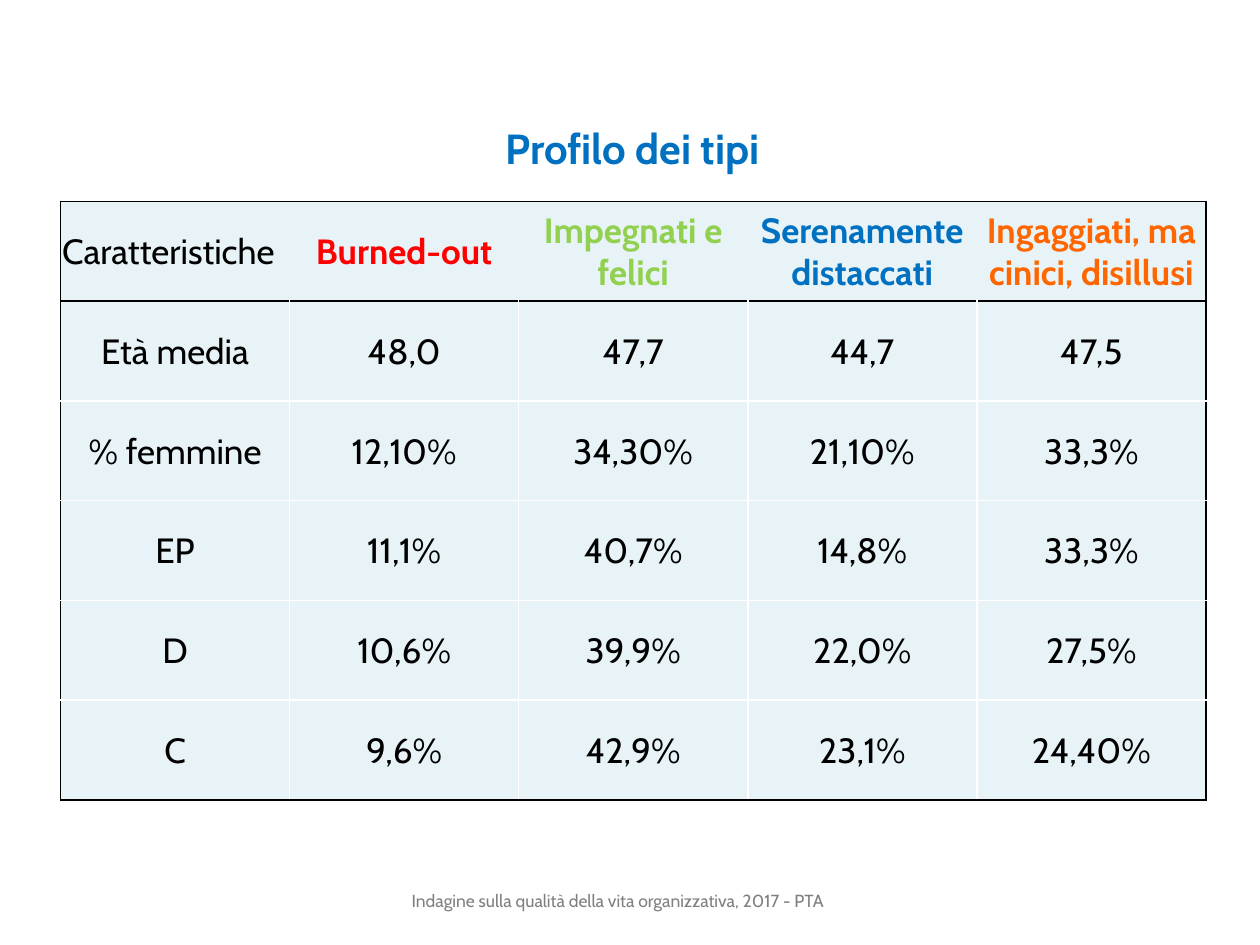
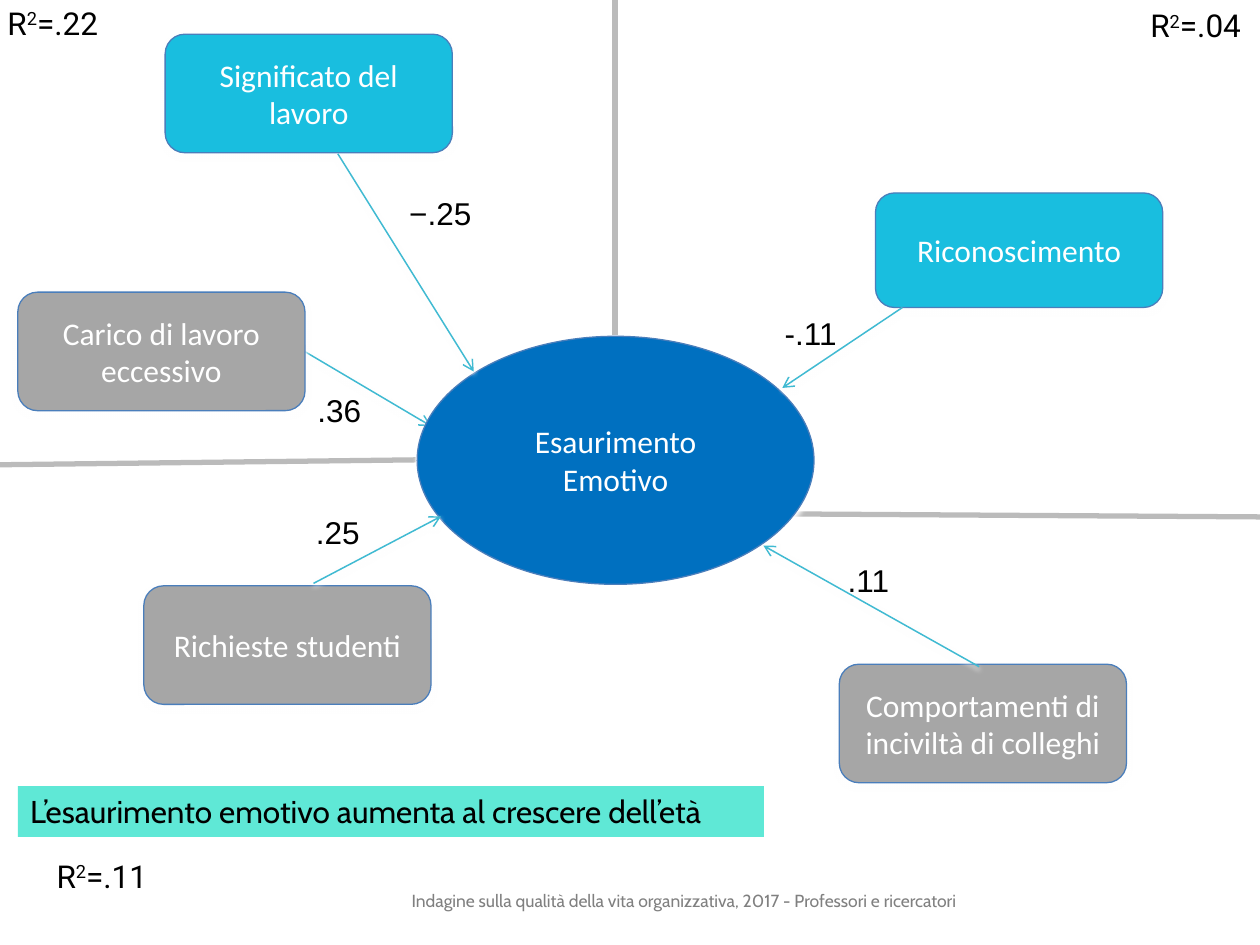
from typing import NamedTuple, Optional

from lxml import etree
from pptx import Presentation
from pptx import util as u
from pptx.dml.color import RGBColor
from pptx.enum import shapes, text
from pptx.oxml.ns import qn

# Colours
BLACK = RGBColor(0x00, 0x00, 0x00)
WHITE = RGBColor(0xFF, 0xFF, 0xFF)
GREY = RGBColor(0x80, 0x80, 0x80)
BLUE = RGBColor(0x00, 0x70, 0xC0)
RED = RGBColor(0xFF, 0x00, 0x00)
GREEN = RGBColor(0x92, 0xD0, 0x50)
ORANGE = RGBColor(0xFF, 0x66, 0x00)
PALE = RGBColor(0xE8, 0xF3, 0xF7)
CYAN = RGBColor(0x19, 0xBE, 0xDF)
STONE = RGBColor(0xA6, 0xA6, 0xA6)
EDGE = RGBColor(0x4A, 0x7E, 0xBB)
ARROW = RGBColor(0x40, 0xBA, 0xD2)
RULE = RGBColor(0xBB, 0xBB, 0xBB)
MINT = RGBColor(0x5F, 0xE8, 0xD6)

LEFT, MID = text.PP_ALIGN.LEFT, text.PP_ALIGN.CENTER
TOP, HALF = text.MSO_ANCHOR.TOP, text.MSO_ANCHOR.MIDDLE
ROUND = shapes.MSO_SHAPE.ROUNDED_RECTANGLE
OVAL = shapes.MSO_SHAPE.OVAL
SURVEY = "Indagine sulla qualità della vita organizzativa, 2017 - "


class Font(NamedTuple):
    name: str
    size: float
    color: RGBColor
    bold: bool = False


class Area(NamedTuple):
    """Left, top, width and height in centimetres."""
    x: float
    y: float
    w: float
    h: float

    def emu(self) -> list:
        return [u.Cm(v) for v in self]


class Node(NamedTuple):
    label: str
    area: Area
    fill: RGBColor
    kind: int = ROUND


class Link(NamedTuple):
    """Ends in centimetres."""
    x1: float
    y1: float
    x2: float
    y2: float


class Shade(NamedTuple):
    alpha: int
    blur: float
    dist: float


class Mark(NamedTuple):
    label: str
    x: float
    y: float


FOOT = Font("Cabin", 10, GREY)
TITLE = Font("Cabin", 24, BLUE, True)
BODY = Font("Cabin", 20, BLACK)
NOTE = Font("Cabin", 18, BLACK)
LABEL = Font("Calibri", 18, WHITE)
COEF = Font("Arial", 18, BLACK)
FIT = Font("Roboto", 18, BLACK)

# Table content
HEADS = [("Caratteristiche", BLACK), ("Burned-out", RED),
         ("Impegnati e felici", GREEN), ("Serenamente\ndistaccati", BLUE),
         ("Ingaggiati, ma cinici, disillusi", ORANGE)]
ROWS = [("Età media", "48,0", "47,7", "44,7", "47,5"),
        ("% femmine", "12,10%", "34,30%", "21,10%", "33,3%"),
        ("EP", "11,1%", "40,7%", "14,8%", "33,3%"),
        ("D", "10,6%", "39,9%", "22,0%", "27,5%"),
        ("C", "9,6%", "42,9%", "23,1%", "24,40%")]
GRID = Area(1.22, 4.06, 23.09, 12.07)

# Diagram content
BOXW, BOXH = 5.79, 2.39
NODES = [
    Node("Significato del lavoro", Area(3.33, 0.69, BOXW, BOXH), CYAN),
    Node("Carico di lavoro eccessivo", Area(0.36, 5.89, BOXW, BOXH), STONE),
    Node("Riconoscimento", Area(17.65, 3.89, BOXW, 2.31), CYAN),
    Node("Richieste studenti", Area(2.9, 11.81, BOXW, BOXH), STONE),
    Node("Comportamenti di inciviltà di colleghi",
         Area(16.92, 13.39, BOXW, BOXH), STONE),
    Node("Esaurimento Emotivo", Area(8.41, 6.78, 8, 5), BLUE, OVAL)]
RULES = [Link(12.4, 0, 12.4, 6.76), Link(25.4, 10.42, 15.9, 10.36),
         Link(8.38, 9.27, 0, 9.37)]
UNDER = [Link(6.15, 7.09, 8.69, 8.59)]
OVER = [Link(6.81, 3.1, 9.55, 7.49), Link(18.19, 6.2, 15.77, 7.82),
        Link(6.32, 11.76, 8.89, 10.41), Link(19.74, 13.44, 15.39, 11)]
COEFS = [Mark(".36", 6.15, 7.75), Mark("−.25", 8, 3.78),
         Mark("-.11", 15.57, 6.2), Mark(".25", 6.12, 10.21),
         Mark(".11", 16.84, 11.18)]
FITS = [Mark("=.22", -0.1, -0.05), Mark("=.04", 22.94, 0),
        Mark("=.11", 0.89, 17.15)]
BOXSHADE, LINESHADE = Shade(35, 3.1, 1.8), Shade(38, 3.1, 1.6)


def dress(run, font: Font) -> None:
    run.font.name, run.font.size = font.name, u.Pt(font.size)
    run.font.bold = font.bold
    run.font.color.rgb = font.color


def write(frame, words: str, font: Font, align=LEFT) -> None:
    frame.text = words
    for par in frame.paragraphs:
        par.alignment = align
        for run in par.runs:
            dress(run, font)


def box(slide, area: Area, words: str, font: Font, align=LEFT, anchor=TOP):
    frame = slide.shapes.add_textbox(*area.emu()).text_frame
    frame.word_wrap = True
    frame.vertical_anchor = anchor
    write(frame, words, font, align)
    return frame


def footer(slide, group: str) -> None:
    box(slide, Area(8.05, 17.65, 12.32, 1.02), SURVEY + group, FOOT,
        anchor=HALF)


def paint(parent, color: RGBColor):
    fill = etree.SubElement(parent, qn("a:solidFill"))
    return etree.SubElement(fill, qn("a:srgbClr"), val=str(color))


def cast(props, shade: Optional[Shade]) -> None:
    """Put a downward shadow, or none, on the shape properties."""
    fx = props.find(qn("a:effectLst"))
    if fx is None:
        fx = etree.SubElement(props, qn("a:effectLst"))
    if shade:
        drop = etree.SubElement(
            fx, qn("a:outerShdw"), blurRad=str(u.Pt(shade.blur)),
            dist=str(u.Pt(shade.dist)), dir="5400000", rotWithShape="0")
        etree.SubElement(paint(drop, BLACK), qn("a:alpha"),
                         val=str(shade.alpha * 1000))


def border(cell, edges: dict) -> None:
    """Draw the cell edges; None leaves an edge empty."""
    props = cell._tc.get_or_add_tcPr()
    for side, color in edges.items():
        line = etree.SubElement(props, qn(f"a:ln{side}"), w=str(u.Pt(1)))
        if color is None:
            etree.SubElement(line, qn("a:noFill"))
        else:
            paint(line, color)


def table(slide) -> None:
    nrow, ncol = len(ROWS) + 1, len(HEADS)
    grid = slide.shapes.add_table(nrow, ncol, *GRID.emu()).table
    grid.first_row = grid.horz_banding = False
    for col in grid.columns:
        col.width = u.Cm(GRID.w / ncol)
    for row in grid.rows:
        row.height = u.Cm(GRID.h / nrow)
    for r, vals in enumerate([[head for head, _ in HEADS], *ROWS]):
        inner = WHITE if r else None
        for c, val in enumerate(vals):
            cell = grid.cell(r, c)
            cell.vertical_anchor = HALF
            cell.margin_left = cell.margin_right = u.Cm(0.03)
            cell.margin_top, cell.margin_bottom = u.Cm(0.03), 0
            font = BODY
            if r == 0:
                font = BODY._replace(color=HEADS[c][1], bold=c > 0)
            write(cell.text_frame, val, font, MID if r or c else LEFT)
            border(cell, {
                "L": BLACK if c == 0 else inner,
                "R": BLACK if c == ncol - 1 else inner,
                "T": BLACK if r < 2 else WHITE,
                "B": BLACK if r in (0, nrow - 1) else WHITE})
            cell.fill.solid()
            cell.fill.fore_color.rgb = PALE


def solid(slide, kind: int, area: Area, fill: RGBColor):
    shape = slide.shapes.add_shape(kind, *area.emu())
    shape.shadow.inherit = False
    shape.fill.solid()
    shape.fill.fore_color.rgb = fill
    shape.text_frame.word_wrap = True
    return shape


def node(slide, item: Node) -> None:
    shape = solid(slide, item.kind, item.area, item.fill)
    shape.line.color.rgb, shape.line.width = EDGE, u.Pt(0.75)
    cast(shape._element.spPr, BOXSHADE)
    shape.text_frame.vertical_anchor = HALF
    write(shape.text_frame, item.label, LABEL, MID)


def link(slide, item: Link, color: RGBColor, width: float,
         arrow: bool = False) -> None:
    line = slide.shapes.add_connector(
        shapes.MSO_CONNECTOR.STRAIGHT, *[u.Cm(v) for v in item])
    line.line.color.rgb, line.line.width = color, u.Pt(width)
    if arrow:
        etree.SubElement(line.line._get_or_add_ln(), qn("a:tailEnd"),
                         type="arrow")
    cast(line._element.spPr, LINESHADE if arrow else None)


def fit(slide, mark: Mark) -> None:
    """Write an R² value with a raised 2."""
    frame = box(slide, Area(mark.x, mark.y, 2.46, 1.02), "R", FIT)
    for part in ("2", mark.label):
        run = frame.paragraphs[0].add_run()
        run.text = part
        dress(run, FIT)
        if part == "2":
            run._r.get_or_add_rPr().set("baseline", "30000")


def profile(slide) -> None:
    footer(slide, "PTA")
    table(slide)
    frame = box(slide, Area(0.25, 2.46, 25, 2.54), "Profilo dei tipi",
                TITLE, MID)
    par = frame.paragraphs[0]
    par.line_spacing, par.space_before = 0.9, u.Pt(12)


def model(slide) -> None:
    # Quadrant rules, boxes and arrows
    for item in RULES:
        link(slide, item, RULE, 3)
    for item in UNDER:
        link(slide, item, ARROW, 0.85, True)
    for item in NODES:
        node(slide, item)
    for item in OVER:
        link(slide, item, ARROW, 0.85, True)
    # Coefficients and explained variance
    for mark in COEFS:
        box(slide, Area(mark.x, mark.y, 1.9, 1.02), mark.label, COEF)
    for mark in FITS:
        fit(slide, mark)
    # Finding and footer
    footer(slide, "Professori e ricercatori")
    band = solid(slide, shapes.MSO_SHAPE.RECTANGLE,
                 Area(0.36, 15.85, 15.04, 1.02), MINT)
    band.line.fill.background()
    band.text_frame.vertical_anchor = TOP
    write(band.text_frame,
          "L’esaurimento emotivo aumenta al crescere dell’età", NOTE)


def main() -> None:
    deck = Presentation()
    deck.slide_width, deck.slide_height = u.Cm(25.4), u.Cm(19.05)
    for draw in (profile, model):
        draw(deck.slides.add_slide(deck.slide_layouts[6]))
    deck.save("out.pptx")


if __name__ == "__main__":
    main()
